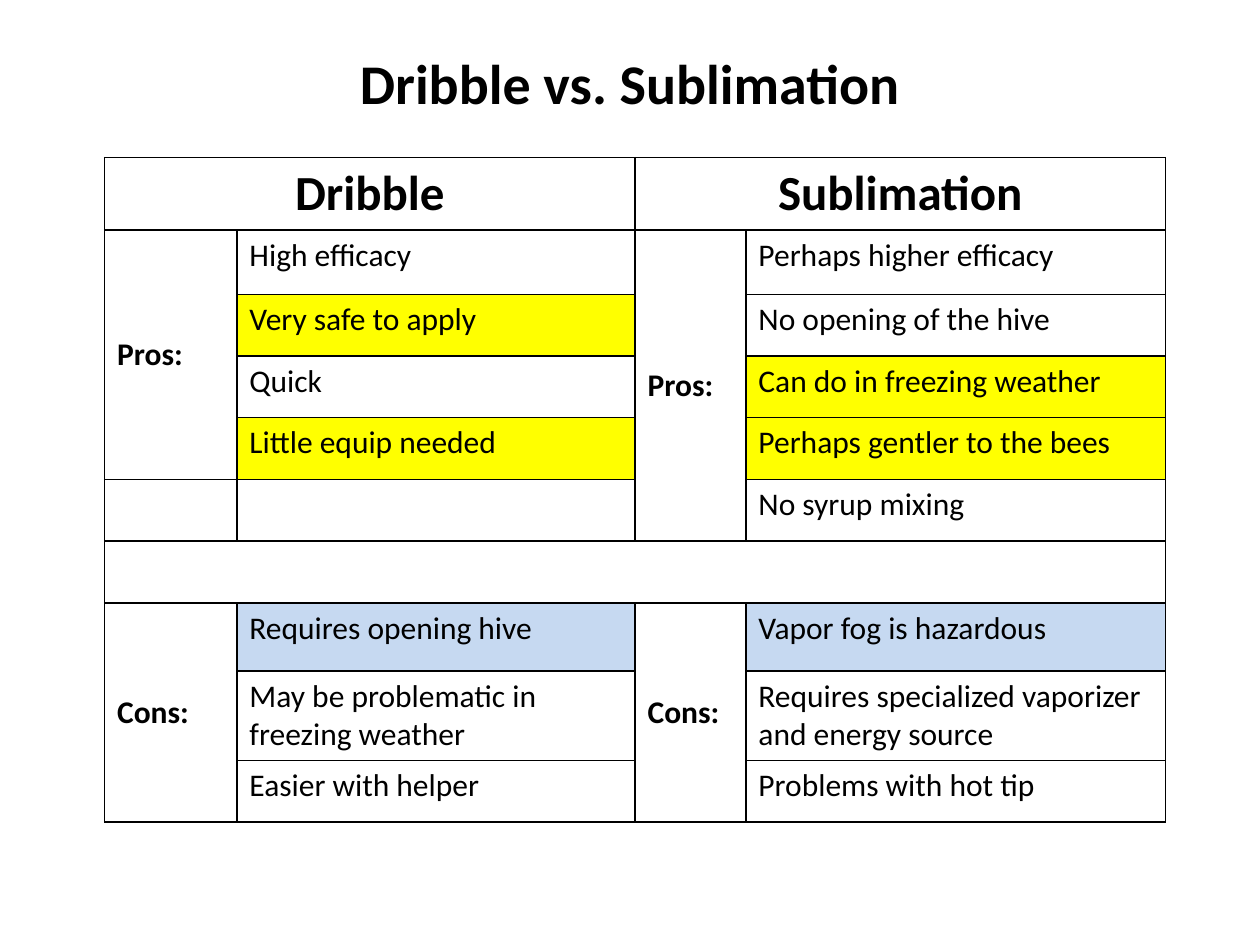
from lxml import etree
from pptx import Presentation
from pptx import util as u
from pptx.dml.color import RGBColor
from pptx.enum import text
from pptx.oxml import ns

BLACK = RGBColor(0x00, 0x00, 0x00)
YELLOW = RGBColor(0xFF, 0xFF, 0x00)
PALE_BLUE = RGBColor(0xC6, 0xD9, 0xF1)

WIDTH, HEIGHT = u.Inches(10), u.Inches(7.5)
COLUMN_SHARES = (1.05, 3.16, 0.88, 3.33)
ROW_SHARES = (0.49, 0.51, 0.49, 0.49, 0.49, 0.49, 0.49, 0.54, 0.49, 0.49)

HEADINGS = {(0, 0): "Dribble", (0, 2): "Sublimation"}
LABELS = {(1, 0): "Pros:", (1, 2): "Pros:", (7, 0): "Cons:", (7, 2): "Cons:"}
POINTS = {
    1: ("High efficacy", "Very safe to apply", "Quick", "Little equip needed", "",
        "", "Requires opening hive", "May be problematic in freezing weather",
        "Easier with helper"),
    3: ("Perhaps higher efficacy", "No opening of the hive",
        "Can do in freezing weather", "Perhaps gentler to the bees",
        "No syrup mixing", "", "Vapor fog is hazardous",
        "Requires specialized vaporizer and energy source",
        "Problems with hot tip"),
}
MERGES = (((0, 0), (0, 1)), ((0, 2), (0, 3)), ((1, 0), (4, 0)), ((1, 2), (5, 2)),
          ((6, 0), (6, 3)), ((7, 0), (9, 0)), ((7, 2), (9, 2)))
HIGHLIGHTS = {(2, 1): YELLOW, (4, 1): YELLOW, (3, 3): YELLOW, (4, 3): YELLOW,
              (7, 1): PALE_BLUE, (7, 3): PALE_BLUE}


def write_text(frame, words, size=18, bold=False, align=text.PP_ALIGN.LEFT):
    """Put one formatted paragraph into a text frame."""
    paragraph = frame.paragraphs[0]
    paragraph.alignment = align
    run = paragraph.add_run()
    run.text = words
    run.font.name = "Calibri"
    run.font.size = u.Pt(size)
    run.font.bold = bold
    run.font.color.rgb = BLACK


def outline_cell(cell, points=1):
    """Draw a black line on all four sides of a cell."""
    properties = cell._tc.get_or_add_tcPr()
    for side in ("lnL", "lnR", "lnT", "lnB"):
        line = etree.SubElement(properties, ns.qn(f"a:{side}"), w=str(u.Pt(points)))
        fill = etree.SubElement(line, ns.qn("a:solidFill"))
        etree.SubElement(fill, ns.qn("a:srgbClr"), val=str(BLACK))


def place_title(slide, left, top, width, height):
    """Place the slide title in the given box."""
    title = slide.shapes.title
    title.left, title.top, title.width, title.height = left, top, width, height
    title.text_frame.vertical_anchor = text.MSO_ANCHOR.MIDDLE
    write_text(title.text_frame, "Dribble vs. Sublimation", size=32, bold=True,
               align=text.PP_ALIGN.CENTER)


def place_comparison(slide, left, top, width, height):
    """Build the table of pros and cons in the given box."""
    comparison = slide.shapes.add_table(
        len(ROW_SHARES), len(COLUMN_SHARES), left, top, width, height).table
    comparison.first_row = comparison.horz_banding = False
    for column, share in zip(comparison.columns, COLUMN_SHARES):
        column.width = int(width * share / sum(COLUMN_SHARES))
    for row, share in zip(comparison.rows, ROW_SHARES):
        row.height = int(height * share / sum(ROW_SHARES))

    for row in range(len(ROW_SHARES)):
        for column in range(len(COLUMN_SHARES)):
            cell = comparison.cell(row, column)
            outline_cell(cell)
            if (row, column) in HIGHLIGHTS:
                cell.fill.solid()
                cell.fill.fore_color.rgb = HIGHLIGHTS[row, column]
            else:
                cell.fill.background()
    for first, last in MERGES:
        comparison.cell(*first).merge(comparison.cell(*last))

    for place, heading in HEADINGS.items():
        write_text(comparison.cell(*place).text_frame, heading, size=28, bold=True,
                   align=text.PP_ALIGN.CENTER)
    for place, label in LABELS.items():
        cell = comparison.cell(*place)
        cell.vertical_anchor = text.MSO_ANCHOR.MIDDLE
        write_text(cell.text_frame, label, bold=True)
    for column, points in POINTS.items():
        for row, point in enumerate(points, start=1):
            if point:
                write_text(comparison.cell(row, column).text_frame, point)


def main():
    """Build the slide and save it."""
    deck = Presentation()
    deck.slide_width, deck.slide_height = WIDTH, HEIGHT
    slide = deck.slides.add_slide(deck.slide_layouts.get_by_name("Title Only"))
    place_title(slide, int(WIDTH * 0.05), int(HEIGHT * 0.04),
                int(WIDTH * 0.9), u.Inches(0.7))
    place_comparison(slide, u.Inches(0.83), u.Inches(1.25),
                     u.Inches(sum(COLUMN_SHARES)), u.Inches(sum(ROW_SHARES)))
    deck.save("out.pptx")


if __name__ == "__main__":
    main()
